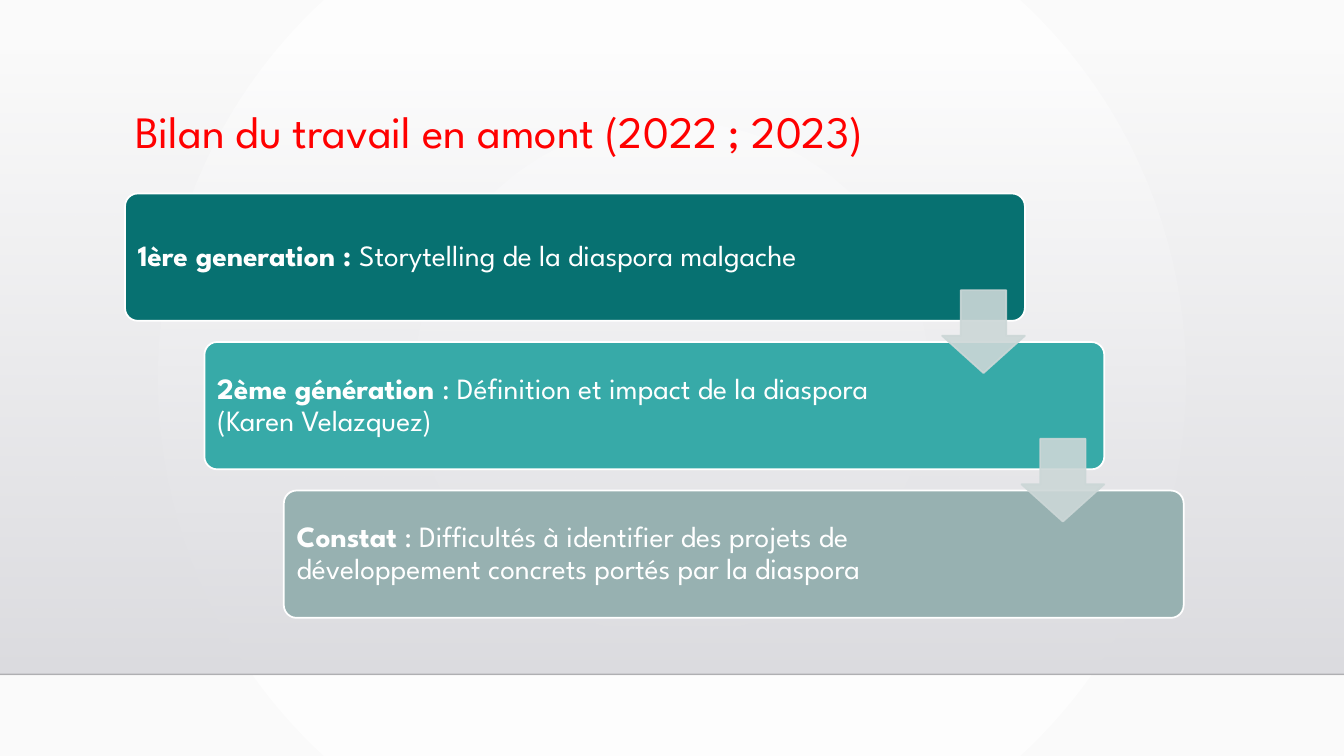
from lxml.etree import SubElement
from pptx import Presentation
from pptx.dml.color import RGBColor
from pptx.enum.shapes import MSO_CONNECTOR, MSO_SHAPE
from pptx.enum.text import MSO_ANCHOR, MSO_AUTO_SIZE, PP_ALIGN
from pptx.oxml.ns import qn
from pptx.util import Inches, Pt

WIDTH, HEIGHT = 13.33, 7.5
FONT = "League Spartan"
STEPS = [
    ("077171", "1ère generation : ", "Storytelling de la diaspora malgache"),
    ("37AAA8", "2ème génération ", ": Définition et impact de la diaspora (Karen Velazquez)"),
    ("97B1B1", "Constat", " : Difficultés à identifier des projets de "
                          "développement concrets portés par la diaspora"),
]


def color(target, value, alpha=None):
    """Give a fill or line format a solid hex colour, with an optional opacity in percent."""
    fill = getattr(target, "fill", target)
    fill.solid()
    fill.fore_color.rgb = RGBColor.from_string(value)
    if alpha is not None:
        set_alpha(fill.fore_color._xFill.find(qn("a:srgbClr")), alpha)


def set_alpha(element, alpha):
    """Add an opacity in percent to a colour element."""
    SubElement(element, qn("a:alpha")).set("val", str(alpha * 1000))


def gradient(fill, stops):
    """Fill with (hex, opacity) stops and return the gradient element, still without direction."""
    fill.gradient()
    element = fill._fill._gradFill
    for child in list(element):
        element.remove(child)
    stop_list = SubElement(element, qn("a:gsLst"))
    for index, (value, alpha) in enumerate(stops):
        stop = SubElement(stop_list, qn("a:gs"))
        stop.set("pos", str(index * 100000 // (len(stops) - 1)))
        shade = SubElement(stop, qn("a:srgbClr"))
        shade.set("val", value)
        set_alpha(shade, alpha)
    return element


def add_backdrop(page):
    """Draw the radial background, the fading band and the line below it."""
    radial = gradient(page.background.fill, [("FFFFFF", 100), ("FAFAFA", 100)])
    path = SubElement(radial, qn("a:path"))
    path.set("path", "circle")
    center = SubElement(path, qn("a:fillToRect"))
    for side in "ltrb":
        center.set(side, "50000")

    top, bottom = 0.51, 6.69
    band = page.shapes.add_shape(MSO_SHAPE.RECTANGLE, 0, Inches(top),
                                 Inches(WIDTH), Inches(bottom - top))
    band.shadow.inherit = False
    band.line.fill.background()
    linear = gradient(band.fill, [("DCDCE0", 0), ("DEDEE2", 100)])
    SubElement(linear, qn("a:lin")).set("ang", "5400000")

    floor = page.shapes.add_connector(MSO_CONNECTOR.STRAIGHT, 0, Inches(bottom),
                                      Inches(WIDTH), Inches(bottom))
    color(floor.line, "000001", 20)
    floor.line.width = Pt(1)
    SubElement(floor._element.spPr, qn("a:effectLst"))


def add_title(page, left, top, width, height):
    """Place the red title above the backdrop."""
    title = page.shapes.title
    page.shapes._spTree.append(title._element)
    title.left, title.top = Inches(left), Inches(top)
    title.width, title.height = Inches(width), Inches(height)
    frame = title.text_frame
    frame.text = "Bilan du travail en amont (2022 ; 2023)"
    frame.auto_size = MSO_AUTO_SIZE.NONE
    frame.vertical_anchor = MSO_ANCHOR.TOP
    para = frame.paragraphs[0]
    para.alignment = PP_ALIGN.LEFT
    para.line_spacing = 0.9
    style_span(para.runs[0], 32, "FF0000")


def style_span(span, size, value, bold=False):
    """Set the font of a run."""
    span.font.name, span.font.size, span.font.bold = FONT, Pt(size), bold
    color(span.font, value)


def add_step(page, left, top, width, height, step):
    """Draw one rounded step with its bold lead and text."""
    fill, lead, detail = step
    box = page.shapes.add_shape(MSO_SHAPE.ROUNDED_RECTANGLE, Inches(left), Inches(top),
                                Inches(width), Inches(height))
    box.adjustments[0] = 0.1
    box.shadow.inherit = False
    color(box.fill, fill)
    color(box.line, "FFFFFF")
    box.line.width = Pt(1.25)
    frame = box.text_frame
    frame.word_wrap = True
    frame.vertical_anchor = MSO_ANCHOR.MIDDLE
    frame.margin_left, frame.margin_right = Inches(0.09), Inches(width * 0.19)
    para = frame.paragraphs[0]
    para.alignment = PP_ALIGN.LEFT
    para.line_spacing = 0.9
    for text, bold in ((lead, True), (detail, False)):
        span = para.add_run()
        span.text = text
        style_span(span, 21, "FFFFFF", bold)


def add_arrow(page, left, top, size):
    """Draw a translucent arrow leading to the next step."""
    arrow = page.shapes.add_shape(MSO_SHAPE.DOWN_ARROW, Inches(left), Inches(top),
                                  Inches(size), Inches(size))
    arrow.adjustments[0], arrow.adjustments[1] = 0.55, 0.45
    arrow.shadow.inherit = False
    color(arrow.fill, "CCD7D7", 90)
    color(arrow.line, "CCD7D7", 90)
    arrow.line.width = Pt(1.25)


def add_staircase(page, left, top, width, height):
    """Lay the steps out as a descending staircase, then join them with arrows."""
    step_width, step_height = width * 0.85, height * 0.3
    gaps = len(STEPS) - 1
    shift, drop = (width - step_width) / gaps, (height - step_height) / gaps
    corners = [(left + index * shift, top + index * drop) for index in range(len(STEPS))]
    for (x, y), step in zip(corners, STEPS):
        add_step(page, x, y, step_width, step_height, step)
    size = step_height * 0.65
    for x, y in corners[:-1]:
        add_arrow(page, x + step_width - size, y + step_height * 0.76, size)


def main():
    """Build and save the deck."""
    deck = Presentation()
    deck.slide_width, deck.slide_height = Inches(WIDTH), Inches(HEIGHT)
    page = deck.slides.add_slide(deck.slide_layouts[5])
    add_backdrop(page)
    add_title(page, 1.24, 1.04, 10.5, 1.15)
    add_staircase(page, 1.24, 1.92, 10.5, 4.21)
    deck.save("out.pptx")


if __name__ == "__main__":
    main()
